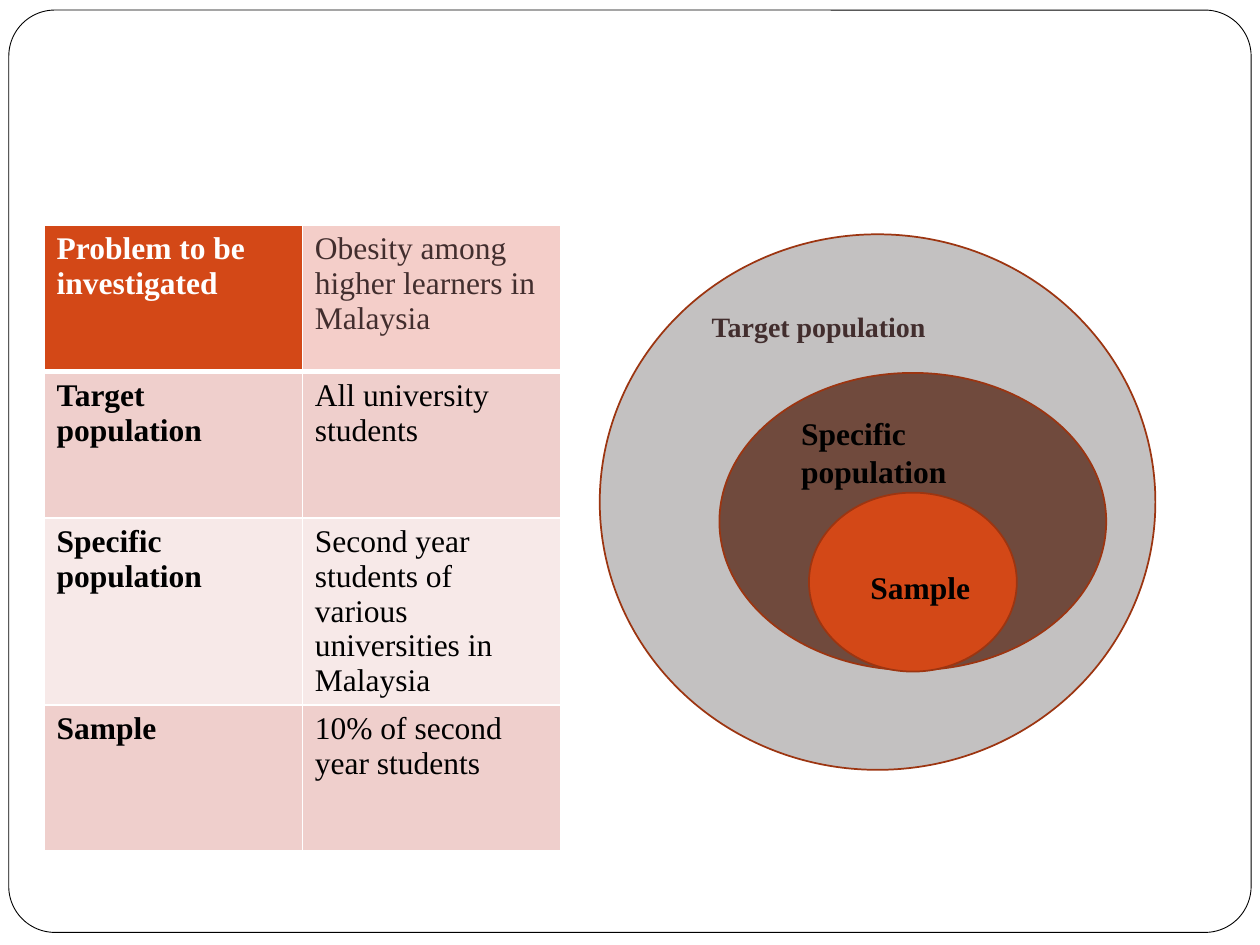
from lxml import etree
from pptx import Presentation
from pptx.dml.color import RGBColor
from pptx.enum.shapes import MSO_SHAPE
from pptx.oxml.ns import qn
from pptx.util import Inches, Pt

ELLIPSE = MSO_SHAPE.OVAL
ROUNDED = MSO_SHAPE.ROUNDED_RECTANGLE
FONT = "Times New Roman"
WHITE, BLACK, ORANGE, PLUM = "FFFFFF", "000000", "D34817", "422E2E"
RUST, DARK_BAND, LIGHT_BAND = "9C3511", "EFCFCC", "F7E9E8"

ROWS = [
    ("Problem to be investigated", "Obesity among higher learners in Malaysia"),
    ("Target population", "All university students"),
    ("Specific population", "Second year students of various universities in Malaysia"),
    ("Sample", "10% of second year students"),
]
RINGS = [
    ((0, 0, 4.41, 4.25), "C3C1C1"),
    ((0.95, 1.1, 3.07, 2.36), "704A3D"),
    ((1.66, 2.05, 1.65, 1.42), ORANGE),
]
LABELS = [
    ("Target population", (0.79, 0.55, 2.99, 0.37), 16, PLUM),
    ("Specific population", (1.5, 1.38, 1.5, 0.71), 18, BLACK),
    ("Sample", (2.05, 2.6, 1.1, 0.4), 18, BLACK),
]


def color(value):
    """Return the colour of a hex string."""
    return RGBColor.from_string(value)


def write(frame, text, size, ink, bold):
    """Put one styled paragraph in a text frame."""
    frame.text = text
    font = frame.paragraphs[0].runs[0].font
    font.name, font.size, font.bold = FONT, Pt(size), bold
    font.color.rgb = color(ink)


def add_outline(page, kind, box, fill, line, width):
    """Add a filled, outlined shape without shadow."""
    shape = page.shapes.add_shape(kind, *map(Inches, box))
    shape.shadow.inherit = False
    shape.fill.solid()
    shape.fill.fore_color.rgb = color(fill)
    shape.line.color.rgb = color(line)
    shape.line.width = Pt(width)
    return shape


def add_borders(cell, bottom):
    """Give a cell white borders, with its own bottom width in points."""
    properties = cell._tc.get_or_add_tcPr()
    for side, width in (("L", 1), ("R", 1), ("T", 1), ("B", bottom)):
        border = etree.SubElement(properties, qn(f"a:ln{side}"), w=str(Pt(width)))
        fill = etree.SubElement(border, qn("a:solidFill"))
        etree.SubElement(fill, qn("a:srgbClr"), val=WHITE)


def cell_colors(row, column):
    """Return the fill and the text colour of a table cell."""
    if row == 0:
        return (ORANGE, WHITE) if column == 0 else ("F4CEC9", PLUM)
    return (DARK_BAND if row % 2 else LIGHT_BAND), BLACK


def add_population_table(page, box):
    """Add the table of populations."""
    table = page.shapes.add_table(len(ROWS), 2, *map(Inches, box)).table
    for row, texts in enumerate(ROWS):
        for column, text in enumerate(texts):
            cell = table.cell(row, column)
            fill, ink = cell_colors(row, column)
            add_borders(cell, 3 if row == 0 else 1)
            cell.fill.solid()
            cell.fill.fore_color.rgb = color(fill)
            write(cell.text_frame, text, 18, ink, column == 0)


def add_population_rings(page, left, top):
    """Add the nested ellipses and their labels."""
    def place(box):
        """Shift a box from the diagram to the page."""
        return left + box[0], top + box[1], box[2], box[3]

    for box, fill in RINGS:
        add_outline(page, ELLIPSE, place(box), fill, RUST, 1)
    for text, box, size, ink in LABELS:
        label = page.shapes.add_textbox(*map(Inches, place(box)))
        label.text_frame.word_wrap = True
        write(label.text_frame, text, size, ink, True)


def main():
    """Build and save the slide."""
    deck = Presentation()
    deck.slide_width, deck.slide_height = Inches(10), Inches(7.5)
    page = deck.slides.add_slide(deck.slide_layouts[6])
    frame = add_outline(page, ROUNDED, (0.07, 0.08, 9.86, 7.32), WHITE, BLACK, 0.5)
    frame.adjustments[0] = 0.05
    add_population_table(page, (0.35, 1.79, 4.1, 4.64))
    add_population_rings(page, 4.76, 1.86)
    deck.save("out.pptx")


if __name__ == "__main__":
    main()
